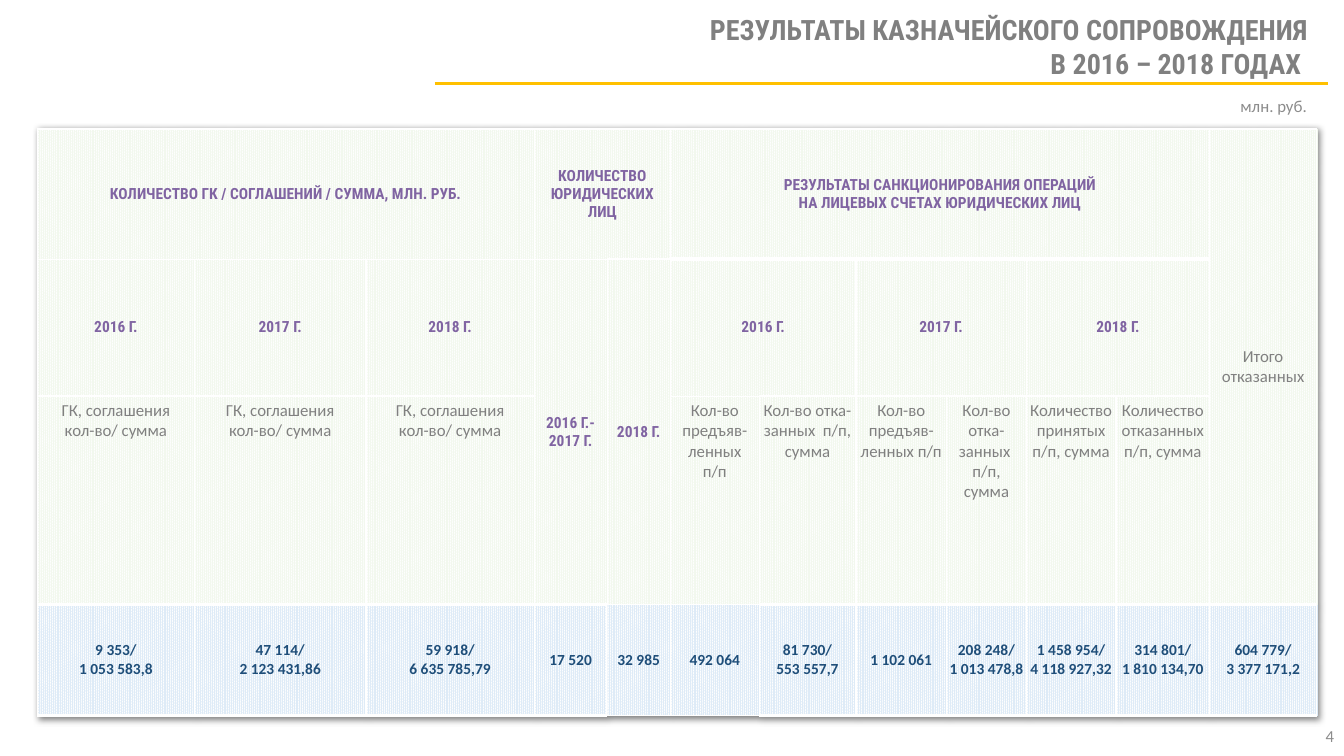
from dataclasses import dataclass

from lxml import etree
from pptx import Presentation
from pptx.dml.color import RGBColor
from pptx.enum.dml import MSO_PATTERN
from pptx.enum.shapes import MSO_CONNECTOR
from pptx.enum.text import MSO_ANCHOR, PP_ALIGN
from pptx.oxml import parse_xml
from pptx.oxml.ns import nsdecls, qn
from pptx.util import Emu, Pt

EMU_PER_PX = 9144
STRAIGHT = MSO_CONNECTOR.STRAIGHT
HATCH = MSO_PATTERN.PERCENT_90
TOP, MIDDLE = MSO_ANCHOR.TOP, MSO_ANCHOR.MIDDLE
CENTER, RIGHT = PP_ALIGN.CENTER, PP_ALIGN.RIGHT
BODY_FONT = "Calibri"
HEADING_FONT = "Roboto Condensed"
COLORS = {
    "white": "FFFFFF", "gray": "808080", "light_gray": "8C8C8C",
    "purple": "8064A2", "navy": "1F4E79", "gold": "FFC000",
    "green_tint": "F2F8EE", "blue_tint": "DEEBF7",
}
COLUMN_WIDTHS = (156, 170, 167, 72, 63, 88, 96, 90, 79, 89, 93, 106)
ROW_HEIGHTS = (129, 136, 207, 110)


@dataclass(frozen=True)
class CellStyle:
    font: str
    size: int
    color: str
    bold: bool
    anchor: MSO_ANCHOR
    margin: int
    tint: str


@dataclass(frozen=True)
class TableCell:
    row: int
    column: int
    text: str
    style: CellStyle
    rows: int = 1
    columns: int = 1
    borders: tuple[float, float, float, float] = (1, 2.25, 1, 2.25)


HEADING = CellStyle(HEADING_FONT, 11, "purple", True, MIDDLE, 4, "green_tint")
LABEL = CellStyle(BODY_FONT, 12, "gray", False, TOP, 4, "green_tint")
NARROW_LABEL = CellStyle(BODY_FONT, 12, "gray", False, TOP, 3, "green_tint")
TOTAL = CellStyle(BODY_FONT, 12, "gray", False, MIDDLE, 4, "green_tint")
FIGURE = CellStyle(BODY_FONT, 11, "navy", True, MIDDLE, 0, "blue_tint")

YEARS = ("2016 Г.", "2017 Г.", "2018 Г.")
CONTRACTS = "ГК, соглашения\nкол-во/ сумма"
REFUSED = "Кол-во отка-занных  п/п,\nсумма"
FIGURES = (
    "9 353/\n1 053 583,8", "47 114/\n2 123 431,86", "59 918/\n6 635 785,79",
    "17 520", "32 985", "492 064", "81 730/\n553 557,7", "1 102 061",
    "208 248/\n1 013 478,8", "1 458 954/\n4 118 927,32",
    "314 801/\n1 810 134,70", "604 779/\n3 377 171,2",
)
PLAIN_FIGURE_COLUMNS = (4, 5)

CELLS = [
    TableCell(0, 0, "КОЛИЧЕСТВО ГК / СОГЛАШЕНИЙ / СУММА, МЛН. РУБ.", HEADING,
              columns=3, borders=(1, 1, 0.25, 0.25)),
    TableCell(0, 3, "КОЛИЧЕСТВО\nЮРИДИЧЕСКИХ ЛИЦ", HEADING,
              columns=2, borders=(0.25, 1, 0.25, 0.25)),
    TableCell(0, 5, "РЕЗУЛЬТАТЫ САНКЦИОНИРОВАНИЯ ОПЕРАЦИЙ\n"
              "НА ЛИЦЕВЫХ СЧЕТАХ ЮРИДИЧЕСКИХ ЛИЦ", HEADING,
              columns=6, borders=(0.25, 1, 1, 3)),
    TableCell(0, 11, "Итого отказанных", TOTAL, rows=3, borders=(1, 1, 1, 2.25)),
    TableCell(1, 3, "2016 Г.-\n2017 Г.", HEADING, rows=2,
              borders=(0.25, 0.25, 0.25, 2.25)),
    TableCell(1, 4, "2018 Г.", HEADING, rows=2, borders=(0.25, 1, 0.25, 1)),
    TableCell(2, 5, "Кол-во предъяв-ленных п/п", LABEL, borders=(0.25, 1, 0.5, 1)),
    TableCell(2, 6, REFUSED, LABEL, borders=(0.5, 2.25, 1, 2.25)),
    TableCell(2, 7, "Кол-во предъяв-ленных п/п", LABEL),
    TableCell(2, 8, REFUSED, LABEL),
    TableCell(2, 9, "Количество принятых п/п, сумма", NARROW_LABEL),
    TableCell(2, 10, "Количество\nотказанных п/п, сумма", NARROW_LABEL),
]
for index, year in enumerate(YEARS):
    right_border = 0.25 if index == 2 else 1
    CELLS += [
        TableCell(1, index, year, HEADING, borders=(1, 0.25, right_border, 2.25)),
        TableCell(2, index, CONTRACTS, LABEL, borders=(1, 2.25, right_border, 2.25)),
        TableCell(1, 5 + 2 * index, year, HEADING, columns=2,
                  borders=(0.25, 1, 1, 1) if index == 0 else (1, 0.25, 1, 2.25)),
    ]
for column, figure in enumerate(FIGURES):
    thickness = 1 if column in PLAIN_FIGURE_COLUMNS else 2.25
    CELLS.append(TableCell(3, column, figure, FIGURE,
                           borders=(1, thickness, 1, thickness)))


def px(value: int) -> Emu:
    return Emu(value * EMU_PER_PX)


def rgb(name: str) -> RGBColor:
    return RGBColor.from_string(COLORS[name])


def write_text(frame, text: str, *, font: str, size: int, color: str,
               bold: bool = False, align: PP_ALIGN = CENTER) -> None:
    frame.word_wrap = True
    for number, line in enumerate(text.split("\n")):
        paragraph = frame.paragraphs[0] if number == 0 else frame.add_paragraph()
        paragraph.alignment = align
        run = paragraph.add_run()
        run.text = line
        run.font.name = font
        run.font.size = Pt(size)
        run.font.bold = bold
        run.font.color.rgb = rgb(color)


def add_text(slide, box: tuple[int, int, int, int], text: str, *,
             anchor: MSO_ANCHOR = MIDDLE, font: str = BODY_FONT, size: int = 12,
             color: str = "light_gray", bold: bool = False) -> None:
    frame = slide.shapes.add_textbox(*map(px, box)).text_frame
    frame.vertical_anchor = anchor
    write_text(frame, text, font=font, size=size, color=color, bold=bold, align=RIGHT)


def set_borders(cell, widths: tuple[float, float, float, float]) -> None:
    properties = cell._tc.get_or_add_tcPr()
    for side, width in zip("LTRB", widths):
        properties.append(parse_xml(
            f'<a:ln{side} {nsdecls("a")} w="{Pt(width)}"><a:solidFill>'
            f'<a:srgbClr val="{COLORS["white"]}"/></a:solidFill></a:ln{side}>'))


def fill_cell(table, item: TableCell) -> None:
    style = item.style
    origin = table.cell(item.row, item.column)
    if item.rows * item.columns > 1:
        origin.merge(table.cell(item.row + item.rows - 1,
                                item.column + item.columns - 1))
    for row in range(item.row, item.row + item.rows):
        for column in range(item.column, item.column + item.columns):
            cell = table.cell(row, column)
            set_borders(cell, item.borders)
            cell.fill.patterned()
            cell.fill.pattern = HATCH
            cell.fill.fore_color.rgb = rgb(style.tint)
            cell.fill.back_color.rgb = rgb("white")
    origin.vertical_anchor = style.anchor
    origin.margin_left = origin.margin_right = px(style.margin)
    origin.margin_top = origin.margin_bottom = px(4)
    write_text(origin.text_frame, item.text, font=style.font, size=style.size,
               color=style.color, bold=style.bold)


def add_results_table(slide) -> None:
    table = slide.shapes.add_table(
        len(ROW_HEIGHTS), len(COLUMN_WIDTHS), px(37), px(128),
        px(sum(COLUMN_WIDTHS)), px(sum(ROW_HEIGHTS))).table
    table.first_row = table.horz_banding = False
    for column, width in zip(table.columns, COLUMN_WIDTHS):
        column.width = px(width)
    for row, height in zip(table.rows, ROW_HEIGHTS):
        row.height = px(height)
    for item in CELLS:
        fill_cell(table, item)
    table._tbl.tblPr.insert(0, parse_xml(
        f'<a:effectLst {nsdecls("a")}><a:outerShdw blurRad="63500" dist="25400" '
        'dir="2700000"><a:srgbClr val="000000"><a:alpha val="50000"/></a:srgbClr>'
        '</a:outerShdw></a:effectLst>'))


def add_title_rule(slide) -> None:
    rule = slide.shapes.add_connector(STRAIGHT, px(431), px(83), px(1317), px(83))
    rule.line.color.rgb = rgb("gold")
    rule.line.width = Pt(2)
    etree.SubElement(rule._element.spPr, qn("a:effectLst"))


def main() -> None:
    presentation = Presentation()
    presentation.slide_width, presentation.slide_height = px(1333), px(750)
    slide = presentation.slides.add_slide(presentation.slide_layouts[6])
    add_text(slide, (1033, 710, 300, 40), "4")
    add_text(slide, (207, 8, 1100, 77),
             "РЕЗУЛЬТАТЫ КАЗНАЧЕЙСКОГО СОПРОВОЖДЕНИЯ\nВ 2016 – 2018 ГОДАХ ",
             anchor=TOP, font=HEADING_FONT, size=20, color="gray", bold=True)
    add_results_table(slide)
    add_text(slide, (1215, 85, 91, 40), "млн. руб.")
    add_title_rule(slide)
    presentation.save("out.pptx")


if __name__ == "__main__":
    main()
